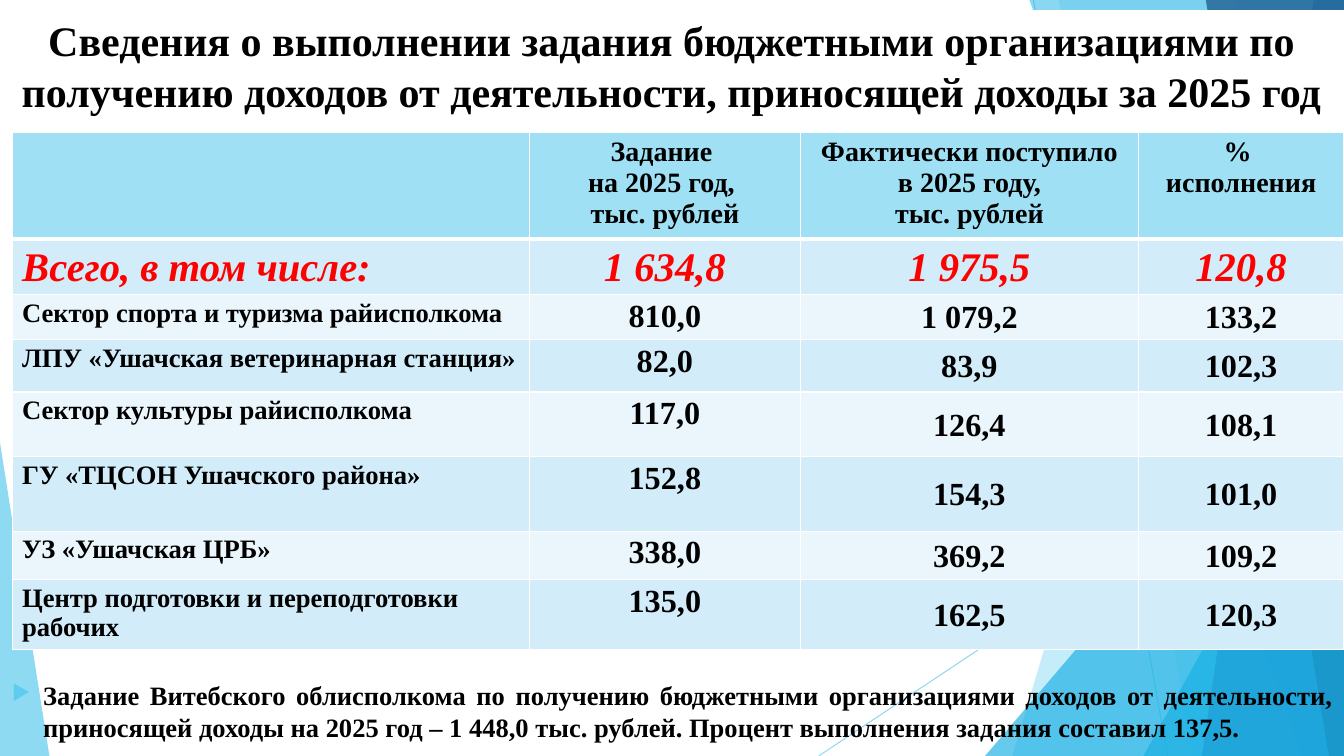
from lxml import etree
from pptx import Presentation
from pptx.dml.color import RGBColor
from pptx.enum.shapes import MSO_CONNECTOR, MSO_SHAPE
from pptx.enum.text import MSO_ANCHOR, PP_ALIGN
from pptx.oxml.ns import qn
from pptx.util import Inches, Pt

LEFT, CENTER, JUSTIFY = PP_ALIGN.LEFT, PP_ALIGN.CENTER, PP_ALIGN.JUSTIFY
TOP, MIDDLE = MSO_ANCHOR.TOP, MSO_ANCHOR.MIDDLE
TRIANGLE, STRAIGHT = MSO_SHAPE.ISOSCELES_TRIANGLE, MSO_CONNECTOR.STRAIGHT
BLACK = RGBColor(0x00, 0x00, 0x00)
WHITE = RGBColor(0xFF, 0xFF, 0xFF)
RED = RGBColor(0xFF, 0x00, 0x00)
SKY = RGBColor(0x5F, 0xCB, 0xEF)
AZURE = RGBColor(0x17, 0xB0, 0xE4)
BLUE = RGBColor(0x2E, 0x83, 0xC3)
NAVY = RGBColor(0x22, 0x62, 0x92)
HEAD = RGBColor(0x9F, 0xE0, 0xF5)
BANDS = RGBColor(0xEA, 0xF6, 0xFC), RGBColor(0xD2, 0xEC, 0xF9)
W, H = 13.33, 7.5

prs = Presentation()
prs.slide_width, prs.slide_height = Inches(W), Inches(H)
s = prs.slides.add_slide(prs.slide_layouts[6])


def set_opacity(fill_owner, percent):
    color = fill_owner.find(".//" + qn("a:srgbClr"))
    etree.SubElement(color, qn("a:alpha"), val=str(percent * 1000))


def write(tf, text, size, color=BLACK, italic=False, align=CENTER):
    """Fill a text frame, one paragraph per line of text."""
    tf.word_wrap = True
    for i, line in enumerate(text.split("\n")):
        p = tf.paragraphs[0] if i == 0 else tf.add_paragraph()
        p.alignment = align
        r = p.add_run()
        r.text = line
        r.font.name, r.font.size = "Times New Roman", Pt(size)
        r.font.bold, r.font.italic = True, italic
        r.font.color.rgb = color


# Background: thin lines
for x1, y1, x2, y2 in [(10.25, 0, 11.58, H), (W, 4.03, 8.12, H)]:
    line = s.shapes.add_connector(STRAIGHT, Inches(x1), Inches(y1), Inches(x2), Inches(y2))
    line.line.color.rgb, line.line.width = SKY, Pt(0.75)
    set_opacity(line._element.spPr, 70)
    etree.SubElement(line._element.spPr, qn("a:effectLst"))

# Background: facets run to the right edge (top x, bottom x),
# triangles stand on the bottom edge (left, top, width, apex)
facets = [
    ((12.28, 10.04), SKY, 36),
    ((10.5, 11.83), SKY, 20),
    ((9.77, 3.33, 3.56, 1), AZURE, 66),
    ((10.21, 12.91), AZURE, 50),
    ((13.03, 11.92), BLUE, 70),
    ((11.96, 13.18), NAVY, 80),
    ((11.34, 3.93, 1.99, 1), AZURE, 66),
    ((0, 4.39, 0.49, 0), SKY, 70),
]
for geometry, color, opacity in facets:
    if len(geometry) == 2:
        x_top, x_bottom = geometry
        fb = s.shapes.build_freeform(Inches(x_top), 0)
        corners = [(W, 0), (W, H), (x_bottom, H)]
        fb.add_line_segments([(Inches(x), Inches(y)) for x, y in corners])
        sp = fb.convert_to_shape()
    else:
        x, y, width, apex = geometry
        sp = s.shapes.add_shape(TRIANGLE, Inches(x), Inches(y), Inches(width), Inches(H - y))
        sp.adjustments[0] = apex
    sp.shadow.inherit = False
    sp.fill.solid()
    sp.fill.fore_color.rgb = color
    sp.line.fill.background()
    set_opacity(sp._element.spPr, opacity)

# Title
sp = s.shapes.add_textbox(0, Inches(0.1), Inches(W), Inches(1.77))
sp.fill.solid()
sp.fill.fore_color.rgb = WHITE
write(sp.text_frame, "Сведения о выполнении задания бюджетными организациями по "
      "получению доходов от деятельности, приносящей доходы за 2025 год", 30)

# Table
rows = [
    ("", "Задание \nна 2025 год, \nтыс. рублей",
     "Фактически поступило в 2025 году,\nтыс. рублей", "% \nисполнения"),
    ("Всего, в том числе:", "1 634,8", "1 975,5", "120,8"),
    ("Сектор спорта и туризма райисполкома", "810,0", "1 079,2", "133,2"),
    ("ЛПУ «Ушачская ветеринарная станция»", "82,0", "83,9", "102,3"),
    ("Сектор культуры райисполкома", "117,0", "126,4", "108,1"),
    ("ГУ «ТЦСОН Ушачского района»", "152,8", "154,3", "101,0"),
    ("УЗ «Ушачская ЦРБ»", "338,0", "369,2", "109,2"),
    ("Центр подготовки и переподготовки рабочих", "135,0", "162,5", "120,3"),
]
col_widths = [5.13, 2.69, 3.35, 2.04]
row_heights = [1.02, 0.55, 0.45, 0.52, 0.64, 0.74, 0.48, 0.69]
table = s.shapes.add_table(len(rows), len(col_widths), Inches(0.12), Inches(1.31),
                           Inches(sum(col_widths)), Inches(sum(row_heights))).table
for column, width in zip(table.columns, col_widths):
    column.width = Inches(width)
for row, height in zip(table.rows, row_heights):
    row.height = Inches(height)

for i, row in enumerate(rows):
    for j, text in enumerate(row):
        cell = table.cell(i, j)
        cell.margin_top, cell.margin_bottom = Inches(0.04), Inches(0.02)
        cell.vertical_anchor = MIDDLE if i == 1 or (i > 1 and j > 1) else TOP
        size = 20 if i == 0 else 29 if i == 1 else 19 if j == 0 else 23
        if text:
            write(cell.text_frame, text, size, RED if i == 1 else BLACK, i == 1,
                  LEFT if j == 0 else CENTER)
        # White borders, thicker between the header and the body
        tcPr = cell._tc.get_or_add_tcPr()
        for side in "LRTB":
            thick = (i, side) in [(0, "B"), (1, "T")]
            ln = etree.SubElement(tcPr, qn("a:ln" + side), w=str(Pt(3 if thick else 1)))
            fill = etree.SubElement(ln, qn("a:solidFill"))
            etree.SubElement(fill, qn("a:srgbClr"), val=str(WHITE))
        cell.fill.solid()
        cell.fill.fore_color.rgb = HEAD if i == 0 else BANDS[i % 2]

# Bulleted note
sp = s.shapes.add_textbox(0, Inches(6.69), Inches(W), Inches(H - 6.69))
write(sp.text_frame, "Задание Витебского облисполкома по получению бюджетными организациями "
      "доходов от деятельности, приносящей доходы на 2025 год – 1 448,0 тыс. рублей. "
      "Процент выполнения задания составил 137,5.", 18.9, align=JUSTIFY)
pPr = sp.text_frame.paragraphs[0]._p.get_or_add_pPr()
pPr.set("marL", str(Inches(0.33)))
pPr.set("indent", str(Inches(-0.31)))
bullet_color = etree.SubElement(pPr, qn("a:buClr"))
etree.SubElement(bullet_color, qn("a:srgbClr"), val=str(SKY))
etree.SubElement(pPr, qn("a:buSzPct"), val="80000")
etree.SubElement(pPr, qn("a:buChar"), char="▶")

prs.save("out.pptx")
